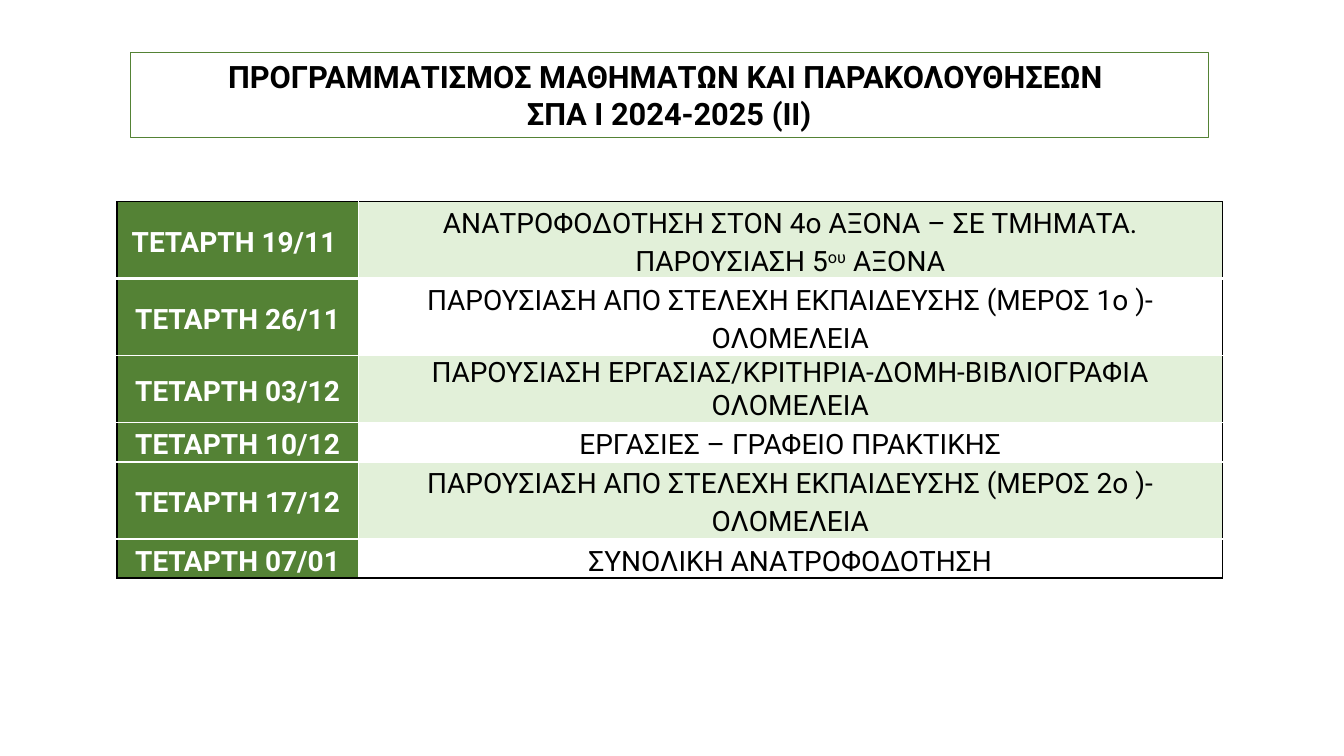
"""Build the course schedule slide: a framed title and a table of dates."""
from lxml import etree
from pptx import Presentation
from pptx.dml.color import RGBColor
from pptx.enum.shapes import MSO_SHAPE
from pptx.enum.text import MSO_ANCHOR, MSO_AUTO_SIZE, PP_ALIGN
from pptx.oxml.ns import qn
from pptx.util import Pt

RECT = MSO_SHAPE.RECTANGLE
MIDDLE = MSO_ANCHOR.MIDDLE
GROW = MSO_AUTO_SIZE.SHAPE_TO_FIT_TEXT
CENTER = PP_ALIGN.CENTER
GREEN, PALE, WHITE, BLACK = "548235", "E2F0D9", "FFFFFF", "000000"


def tint(code):
    return RGBColor.from_string(code)


def write(para, *texts, size=20, color=BLACK, bold=False, line=None, after=None, raised=None):
    para.alignment = CENTER
    if line:
        para.line_spacing = line
    if after:
        para.space_after = Pt(after)
    for text in texts:
        run = para.add_run()
        run.text = text
        font = run.font
        font.name, font.size, font.bold = "Roboto", Pt(size), bold
        font.color.rgb = tint(color)
        if text == raised:
            run._r.get_or_add_rPr().set("baseline", "30000")


deck = Presentation()
deck.slide_width, deck.slide_height = Pt(960), Pt(540)
slide = deck.slides.add_slide(deck.slide_layouts[6])

rows = [
    ("ΤΕΤΑΡΤΗ 19/11 ", ["ΑΝΑΤΡΟΦΟΔΟΤΗΣΗ ΣΤΟΝ 4ο ΑΞΟΝΑ – ΣΕ ΤΜΗΜΑΤΑ. ΠΑΡΟΥΣΙΑΣΗ 5", "ου", " ΑΞΟΝΑ"], 55),
    ("ΤΕΤΑΡΤΗ 26/11", ["ΠΑΡΟΥΣΙΑΣΗ ΑΠΟ ΣΤΕΛΕΧΗ ΕΚΠΑΙΔΕΥΣΗΣ (ΜΕΡΟΣ 1ο )-ΟΛΟΜΕΛΕΙΑ"], 55),
    ("ΤΕΤΑΡΤΗ 03/12", ["ΠΑΡΟΥΣΙΑΣΗ ΕΡΓΑΣΙΑΣ/ΚΡΙΤΗΡΙΑ-ΔΟΜΗ-ΒΙΒΛΙΟΓΡΑΦΙΑ ΟΛΟΜΕΛΕΙΑ"], 48),
    ("ΤΕΤΑΡΤΗ 10/12", ["ΕΡΓΑΣΙΕΣ – ΓΡΑΦΕΙΟ ΠΡΑΚΤΙΚΗΣ"], 28),
    ("ΤΕΤΑΡΤΗ 17/12", ["ΠΑΡΟΥΣΙΑΣΗ ΑΠΟ ΣΤΕΛΕΧΗ ΕΚΠΑΙΔΕΥΣΗΣ (ΜΕΡΟΣ 2ο )-ΟΛΟΜΕΛΕΙΑ"], 55),
    ("ΤΕΤΑΡΤΗ 07/01", ["ΣΥΝΟΛΙΚΗ ΑΝΑΤΡΟΦΟΔΟΤΗΣΗ"], 28),
]
last = len(rows) - 1
high = sum(row[2] for row in rows)
table = slide.shapes.add_table(len(rows), 2, Pt(83.5), Pt(144), Pt(789.5), Pt(high)).table
table.columns[0].width, table.columns[1].width = Pt(172.5), Pt(617)

for r, (date, topic, height) in enumerate(rows):
    table.rows[r].height = Pt(height)
    for c in range(2):
        cell = table.cell(r, c)
        cell.vertical_anchor = MIDDLE
        cell.margin_left = cell.margin_right = Pt(3.6)
        cell.margin_top, cell.margin_bottom = Pt(0.7), Pt(0)
        outer = {"L": c == 0, "R": c == 1, "T": r == 0, "B": r == last}
        for side, edge in outer.items():
            wide = 3 if r == 0 and side == "B" else 1
            rule = etree.SubElement(cell._tc.get_or_add_tcPr(), qn("a:ln" + side), w=str(Pt(wide)))
            fill = etree.SubElement(rule, qn("a:solidFill"))
            etree.SubElement(fill, qn("a:srgbClr"), val=BLACK if edge else WHITE)
        cell.fill.solid()
        band = WHITE if r % 2 else PALE
        cell.fill.fore_color.rgb = tint(band if c else GREEN)
        para = cell.text_frame.paragraphs[0]
        if c == 0:
            write(para, date, color=WHITE, bold=True, line=1.15, after=10)
        elif r == 2:
            write(para, *topic)
        else:
            write(para, *topic, line=1.15, after=10, raised="ου")

title = slide.shapes.add_shape(RECT, Pt(93), Pt(37.5), Pt(770), Pt(60.5))
title.shadow.inherit = False
title.fill.background()
title.line.color.rgb = tint(GREEN)
title.line.width = Pt(0.75)
frame = title.text_frame
frame.word_wrap = True
frame.auto_size = GROW
write(frame.paragraphs[0], "ΠΡΟΓΡΑΜΜΑΤΙΣΜΟΣ ΜΑΘΗΜΑΤΩΝ ΚΑΙ ΠΑΡΑΚΟΛΟΥΘΗΣΕΩΝ ", size=22, bold=True)
write(frame.add_paragraph(), "ΣΠΑ Ι 2024-2025 (ΙΙ)", size=22, bold=True)

deck.save("out.pptx")
